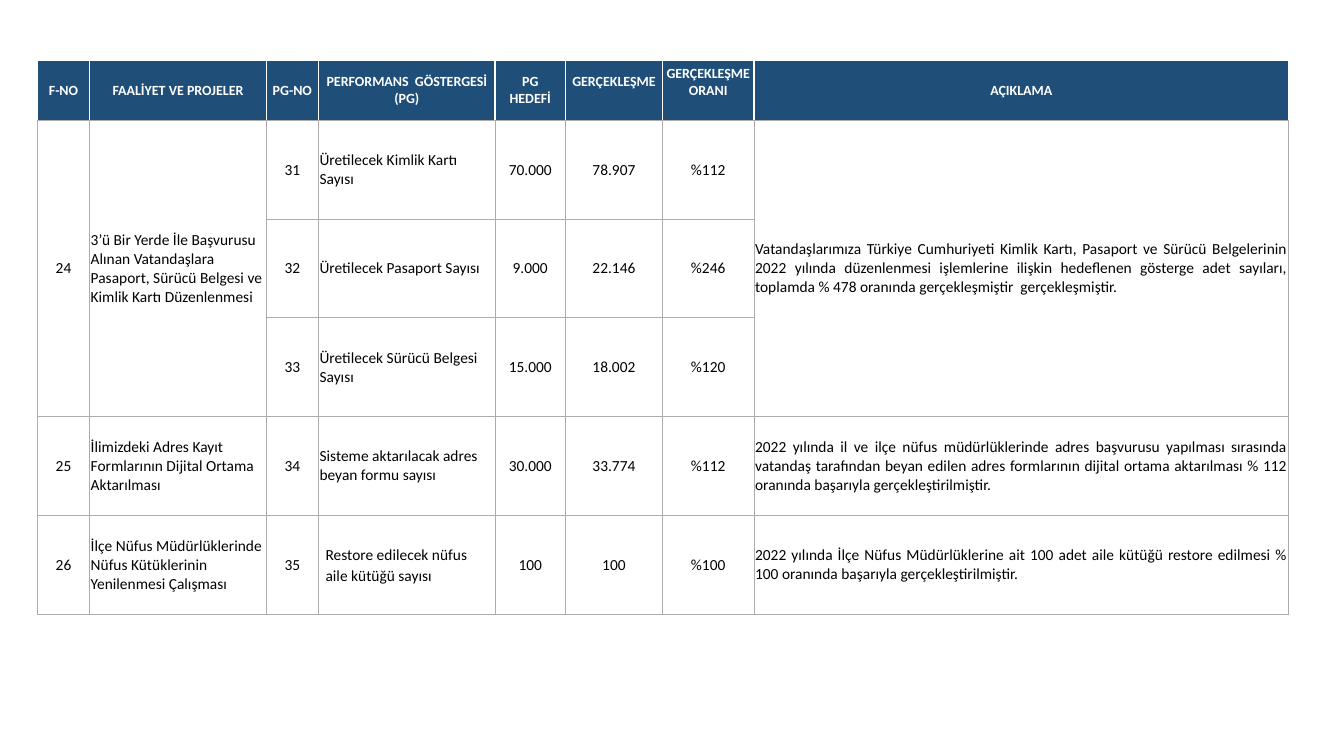
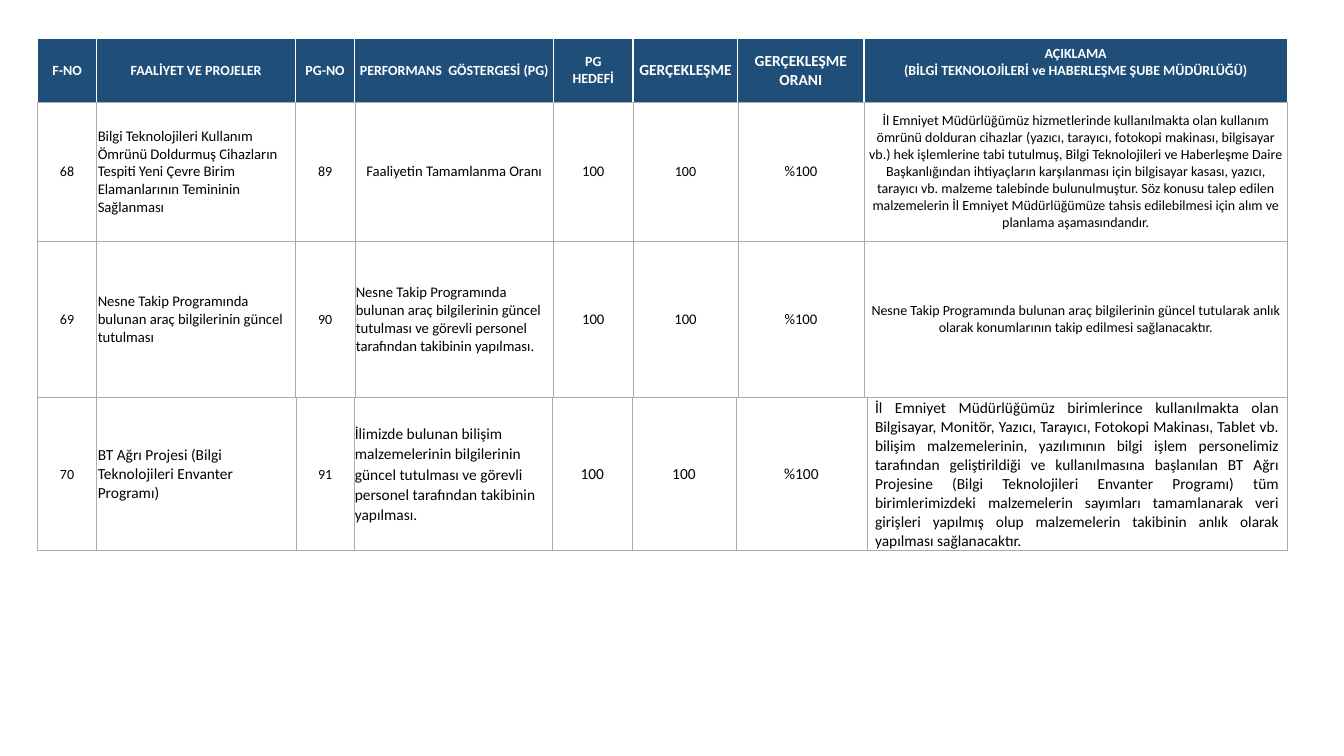
from dataclasses import dataclass
from typing import Optional

from lxml import etree
from pptx import Presentation
from pptx.dml.color import RGBColor
from pptx.enum import text
from pptx.oxml import ns
from pptx.util import Inches, Pt

COLORS = {"header": "1F4E79", "white": "FFFFFF", "black": "000000", "grid": "AFABAB"}
FONT = "Calibri"
LEFT = 0.37
CENTER = text.PP_ALIGN.CENTER
START = text.PP_ALIGN.LEFT
JUSTIFY = text.PP_ALIGN.JUSTIFY
COLUMN_ALIGN = [CENTER, START, CENTER, START, CENTER, CENTER, CENTER, JUSTIFY]
HEADER_BORDERS = {"L": ("white", 1), "R": ("white", 1), "T": ("white", 1), "B": ("grid", 0.25)}
BODY_BORDERS = {"L": ("grid", 0.5), "R": ("grid", 0.5), "T": ("grid", 0.25), "B": ("grid", 0.25)}


@dataclass
class Entry:
    words: str
    align: Optional[int] = None
    side: float = 0.01
    bottom: float = 0
    spacing: Optional[float] = None


@dataclass
class Row:
    height: float
    sizes: list
    entries: list
    header: bool = False


def header_row(height, sizes, raised, description="AÇIKLAMA"):
    titles = ["F-NO", "FAALİYET VE PROJELER", "PG-NO", "PERFORMANS  GÖSTERGESİ (PG)",
              "PG\vHEDEFİ", "GERÇEKLEŞME", "GERÇEKLEŞME ORANI", description]
    entries = [Entry(title, CENTER, bottom=0.17 if column in raised else 0)
               for column, title in enumerate(titles)]
    return Row(height, sizes, entries, header=True)


def set_borders(cell, borders):
    properties = cell._tc.get_or_add_tcPr()
    for index, (side, (color, width)) in enumerate(borders.items()):
        line = etree.Element(ns.qn(f"a:ln{side}"), w=str(Pt(width)))
        fill = etree.SubElement(line, ns.qn("a:solidFill"))
        etree.SubElement(fill, ns.qn("a:srgbClr"), val=COLORS[color])
        properties.insert(index, line)


def fill_cell(cell, entry, size, align, header):
    cell.vertical_anchor = text.MSO_ANCHOR.MIDDLE
    cell.margin_left = cell.margin_right = Inches(entry.side)
    cell.margin_top = Inches(0.01)
    cell.margin_bottom = Inches(entry.bottom)
    if header:
        cell.fill.solid()
        cell.fill.fore_color.rgb = RGBColor.from_string(COLORS["header"])
    else:
        cell.fill.background()
    set_borders(cell, HEADER_BORDERS if header else BODY_BORDERS)
    cell.text_frame.text = entry.words
    for para in cell.text_frame.paragraphs:
        para.alignment = align if entry.align is None else entry.align
        if entry.spacing:
            para.line_spacing = entry.spacing
        para.font.name = FONT
        para.font.size = Pt(size)
        para.font.bold = header
        para.font.color.rgb = RGBColor.from_string(COLORS["white" if header else "black"])


def add_grid(page, top, widths, rows, merges=()):
    height = sum(row.height for row in rows)
    table = page.shapes.add_table(len(rows), len(widths), Inches(LEFT), Inches(top),
                                  Inches(sum(widths)), Inches(height)).table
    table.first_row = table.horz_banding = False
    for column, width in zip(table.columns, widths):
        column.width = Inches(width)
    for row_index, row in enumerate(rows):
        table.rows[row_index].height = Inches(row.height)
        for column, (entry, size, align) in enumerate(zip(row.entries, row.sizes, COLUMN_ALIGN)):
            entry = entry if isinstance(entry, Entry) else Entry(entry)
            fill_cell(table.cell(row_index, column), entry, size, align, row.header)
    for column, first, last in merges:
        table.cell(first, column).merge(table.cell(last, column))


def build_population_page(page):
    entries = [
        ["24", "3’ü Bir Yerde İle Başvurusu Alınan Vatandaşlara Pasaport, Sürücü Belgesi ve "
         "Kimlik Kartı Düzenlenmesi", "31", "Üretilecek Kimlik Kartı Sayısı",
         "70.000", "78.907", "%112",
         "Vatandaşlarımıza Türkiye Cumhuriyeti Kimlik Kartı, Pasaport ve Sürücü Belgelerinin "
         "2022 yılında düzenlenmesi işlemlerine ilişkin hedeflenen gösterge adet sayıları, "
         "toplamda % 478 oranında gerçekleşmiştir  gerçekleşmiştir."],
        ["", "", "32", "Üretilecek Pasaport Sayısı", "9.000", "22.146", "%246", ""],
        ["", "", "33", "Üretilecek Sürücü Belgesi Sayısı", "15.000", "18.002", "%120", ""],
        ["25", "İlimizdeki Adres Kayıt Formlarının Dijital Ortama Aktarılması", "34",
         "Sisteme aktarılacak adres beyan formu sayısı", "30.000", "33.774", "%112",
         "2022 yılında il ve ilçe nüfus müdürlüklerinde adres başvurusu yapılması sırasında "
         "vatandaş tarafından beyan edilen adres formlarının dijital ortama aktarılması % 112 "
         "oranında başarıyla gerçekleştirilmiştir."],
        ["26", "İlçe Nüfus Müdürlüklerinde Nüfus Kütüklerinin Yenilenmesi Çalışması", "35",
         Entry("Restore edilecek nüfus aile kütüğü sayısı", side=0.07, spacing=1.07),
         "100", "100", "%100",
         "2022 yılında İlçe Nüfus Müdürlüklerine ait 100 adet aile kütüğü restore edilmesi "
         "% 100 oranında başarıyla gerçekleştirilmiştir."],
    ]
    rows = [header_row(0.59, [10] * 8, raised=(5, 6))]
    rows += [Row(0.98, [11] * 8, row_entries) for row_entries in entries]
    add_grid(page, 0.6, [0.52, 1.75, 0.52, 1.75, 0.7, 0.96, 0.91, 5.3], rows,
             merges=[(column, 1, 3) for column in (0, 1, 7)])


def build_technology_page(page):
    device_row = Row(1.38, [10, 10.5, 10, 10.5, 10.5, 10, 10.5, 10], [
        "68", "Bilgi Teknolojileri Kullanım Ömrünü Doldurmuş Cihazların Tespiti Yeni Çevre "
        "Birim Elamanlarının Temininin Sağlanması", "89",
        Entry("Faaliyetin Tamamlanma Oranı", CENTER), "100", "100", "%100",
        Entry("İl Emniyet Müdürlüğümüz hizmetlerinde kullanılmakta olan kullanım ömrünü "
              "dolduran cihazlar (yazıcı, tarayıcı, fotokopi makinası, bilgisayar vb.) hek "
              "işlemlerine tabi tutulmuş, Bilgi Teknolojileri ve Haberleşme Daire "
              "Başkanlığından ihtiyaçların karşılanması için bilgisayar kasası, yazıcı, "
              "tarayıcı vb. malzeme talebinde bulunulmuştur. Söz konusu talep edilen "
              "malzemelerin İl Emniyet Müdürlüğümüze tahsis edilebilmesi için alım ve "
              "planlama aşamasındandır.", CENTER),
    ])
    tracking_row = Row(1.55, [10, 10.5, 10, 10.5, 10.5, 10.5, 10.5, 10], [
        "69", "Nesne Takip Programında bulunan araç bilgilerinin güncel tutulması", "90",
        "Nesne Takip Programında bulunan araç bilgilerinin güncel tutulması ve görevli "
        "personel tarafından takibinin yapılması.", "100", "100", "%100",
        Entry("Nesne Takip Programında bulunan araç bilgilerinin güncel tutularak anlık "
              "olarak konumlarının takip edilmesi sağlanacaktır.", CENTER),
    ])
    inventory_row = Row(1.52, [10, 11, 10, 11, 11, 11, 11, 11], [
        "70", "BT Ağrı Projesi (Bilgi Teknolojileri Envanter Programı)", "91",
        Entry("İlimizde bulunan bilişim malzemelerinin bilgilerinin güncel tutulması ve "
              "görevli personel tarafından takibinin yapılması.", spacing=1.07),
        "100", "100", Entry("%100", side=0.08),
        Entry("İl Emniyet Müdürlüğümüz birimlerince kullanılmakta olan Bilgisayar, Monitör, "
              "Yazıcı, Tarayıcı, Fotokopi Makinası, Tablet vb. bilişim malzemelerinin, "
              "yazılımının bilgi işlem personelimiz tarafından geliştirildiği ve "
              "kullanılmasına başlanılan BT Ağrı Projesine (Bilgi Teknolojileri Envanter "
              "Programı) tüm birimlerimizdeki malzemelerin sayımları tamamlanarak veri "
              "girişleri yapılmış olup malzemelerin takibinin anlık olarak yapılması "
              "sağlanacaktır.", side=0.08),
    ])
    header = header_row(0.63, [10, 10, 10, 10, 10, 11, 11, 10], raised=(7,),
                        description="AÇIKLAMA\n(BİLGİ TEKNOLOJİLERİ ve HABERLEŞME "
                                    "ŞUBE MÜDÜRLÜĞÜ)")
    add_grid(page, 0.38, [0.59, 1.97, 0.59, 1.97, 0.79, 1.04, 1.25, 4.2],
             [header, device_row, tracking_row])
    add_grid(page, 3.94, [0.59, 1.98, 0.57, 1.97, 0.79, 1.03, 1.3, 4.17], [inventory_row])


def main():
    deck = Presentation()
    deck.slide_width = Inches(13.33)
    deck.slide_height = Inches(7.5)
    blank = deck.slide_layouts[6]
    for build_page in (build_population_page, build_technology_page):
        build_page(deck.slides.add_slide(blank))
    deck.save("out.pptx")


if __name__ == "__main__":
    main()
